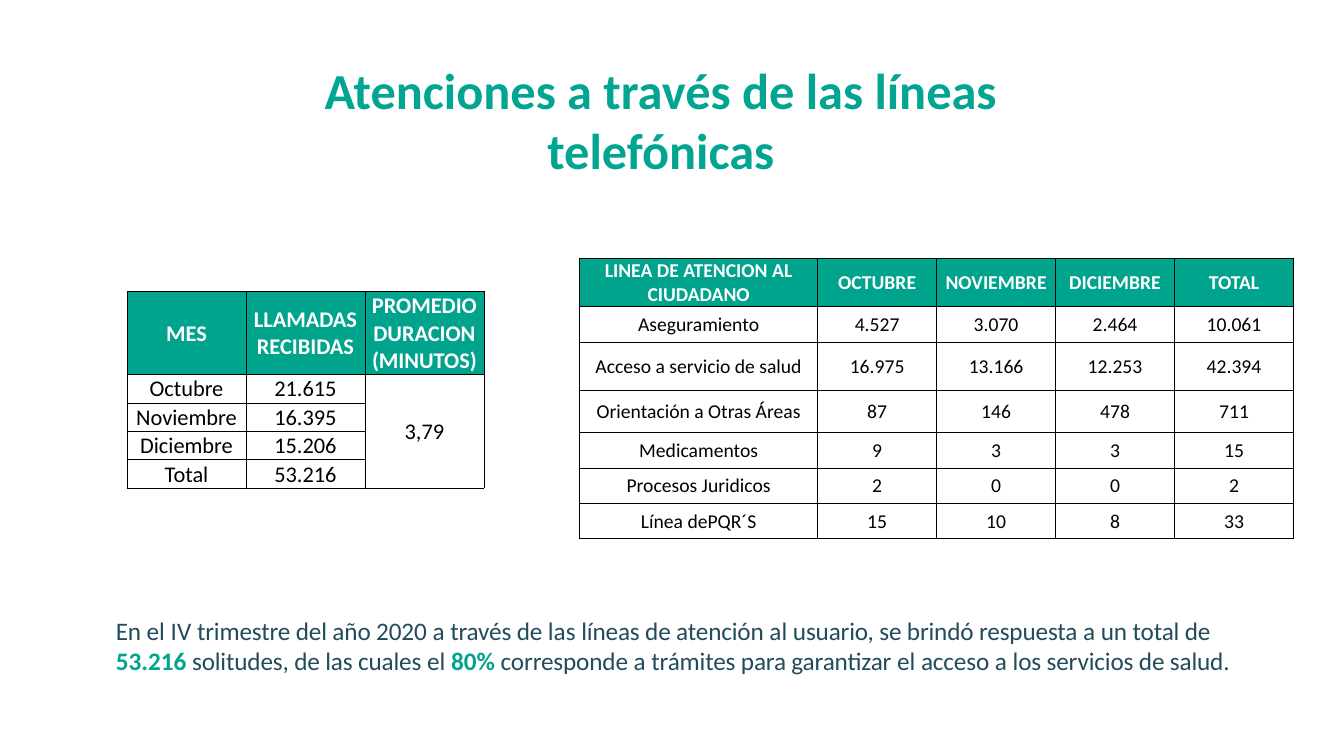
from lxml import etree
from pptx import Presentation
from pptx.dml.color import RGBColor
from pptx.enum.text import MSO_ANCHOR, PP_ALIGN
from pptx.oxml.ns import qn
from pptx.util import Inches, Pt

MIDDLE = MSO_ANCHOR.MIDDLE
CENTER = PP_ALIGN.CENTER
FONT = "Calibri"
TITLE_GREEN, HEADER_GREEN, ACCENT_GREEN = "01A592", "00A48D", "00A38D"
SLATE, WHITE, BLACK = "224B5B", "FFFFFF", "000000"
COLUMN = 1.18

CALLS = [
    ["MES", "LLAMADAS RECIBIDAS", "PROMEDIO DURACION (MINUTOS)"],
    ["Octubre", "21.615", "3,79"],
    ["Noviembre", "16.395", None],
    ["Diciembre", "15.206", None],
    ["Total", "53.216", None],
]
LINES = [
    ["LINEA DE ATENCION AL CIUDADANO", "OCTUBRE", "NOVIEMBRE", "DICIEMBRE", "TOTAL"],
    ["Aseguramiento", "4.527", "3.070", "2.464", "10.061"],
    ["Acceso a servicio de salud", "16.975", "13.166", "12.253", "42.394"],
    ["Orientación a Otras Áreas", "87", "146", "478", "711"],
    ["Medicamentos", "9", "3", "3", "15"],
    ["Procesos Juridicos", "2", "0", "0", "2"],
    ["Línea dePQR´S", "15", "10", "8", "33"],
]
SUMMARY = [
    ("En ", -10), ("el IV ", 0), ("trimestre del año 2020", -10), (" a ", 0),
    ("través de ", -10), ("las ", 0), ("líneas de atención ", -10), ("al ", 0),
    ("usuario, se brindó respuesta ", -10), ("a ", 0), ("un total de ", -10),
    ("53.216 ", 0), ("solitudes, de las cuales ", -10), ("el ", 0), ("80% ", 0),
    ("corresponde ", -10), ("a ", 0), ("trámites para garantizar ", -10), ("el ", 0),
    ("acceso ", -10), ("a ", 0), ("los servicios de salud.", -10),
]
HIGHLIGHTS = {"53.216 ", "80% "}


def color(value):
    """Turn a hex string into a colour."""
    return RGBColor.from_string(value)


def add_span(para, text, size, ink, bold=False):
    """Add one formatted run to a paragraph."""
    span = para.add_run()
    span.text = text
    span.font.name = FONT
    span.font.size = Pt(size)
    span.font.bold = bold
    span.font.color.rgb = color(ink)
    return span


def place(shape, box):
    """Move a shape to a box given in inches."""
    shape.left, shape.top, shape.width, shape.height = map(Inches, box)


def add_title(page, box):
    """Fill the title placeholder."""
    title = page.shapes.title
    place(title, box)
    frame = title.text_frame
    frame.word_wrap = True
    frame.vertical_anchor = MIDDLE
    para = frame.paragraphs[0]
    para.alignment = CENTER
    add_span(para, "Atenciones a través de las líneas telefónicas", 36, TITLE_GREEN, True)


def add_borders(cell):
    """Draw thin black lines on all sides of a cell."""
    properties = cell._tc.get_or_add_tcPr()
    for side in ("lnL", "lnR", "lnT", "lnB"):
        line = etree.SubElement(properties, qn(f"a:{side}"), w=str(Pt(0.5)))
        fill = etree.SubElement(line, qn("a:solidFill"))
        etree.SubElement(fill, qn("a:srgbClr"), val=BLACK)


def format_cell(cell, text, size, header):
    """Set the borders, fill, margins and text of a cell."""
    add_borders(cell)
    if header:
        cell.fill.solid()
        cell.fill.fore_color.rgb = color(HEADER_GREEN)
    else:
        cell.fill.background()
    cell.margin_left = cell.margin_right = cell.margin_top = Inches(0.01)
    cell.margin_bottom = 0
    cell.vertical_anchor = MIDDLE
    if text is not None:
        para = cell.text_frame.paragraphs[0]
        para.alignment = CENTER
        add_span(para, text, size, WHITE if header else BLACK, header)


def add_data_table(page, left, top, rows, spans, heights, size):
    """Build a table whose columns span whole grid columns."""
    box = map(Inches, (left, top, COLUMN * sum(spans), sum(heights)))
    table = page.shapes.add_table(len(rows), len(spans), *box).table
    table.horz_banding = False
    for column, count in zip(table.columns, spans):
        column.width = Inches(COLUMN * count)
    for index, (row, height) in enumerate(zip(rows, heights)):
        table.rows[index].height = Inches(height)
        for position, text in enumerate(row):
            format_cell(table.cell(index, position), text, size, index == 0)
    return table


def add_summary(page, box):
    """Write the closing sentence with its highlighted figures."""
    frame = page.shapes.add_textbox(*map(Inches, box)).text_frame
    frame.word_wrap = True
    para = frame.paragraphs[0]
    for text, spacing in SUMMARY:
        strong = text in HIGHLIGHTS
        span = add_span(para, text, 18, ACCENT_GREEN if strong else SLATE, strong)
        span._r.get_or_add_rPr().set("spc", str(spacing))


def main():
    """Build and save the slide."""
    deck = Presentation()
    deck.slide_width, deck.slide_height = Inches(13.33), Inches(7.5)
    page = deck.slides.add_slide(deck.slide_layouts[5])
    add_title(page, (1.97, 0.53, 9.17, 1.31))
    calls = add_data_table(page, 1.26, 2.89, CALLS, [1] * 3, [0.7] + [0.24] * 4, 16)
    calls.cell(1, 2).merge(calls.cell(4, 2))
    heights = [0.47, 0.35, 0.48, 0.42] + [0.35] * 3
    add_data_table(page, 5.75, 2.56, LINES, [2] + [1] * 4, heights, 14)
    add_summary(page, (1.05, 6.05, 11.62, 0.71))
    deck.save("out.pptx")


if __name__ == "__main__":
    main()
